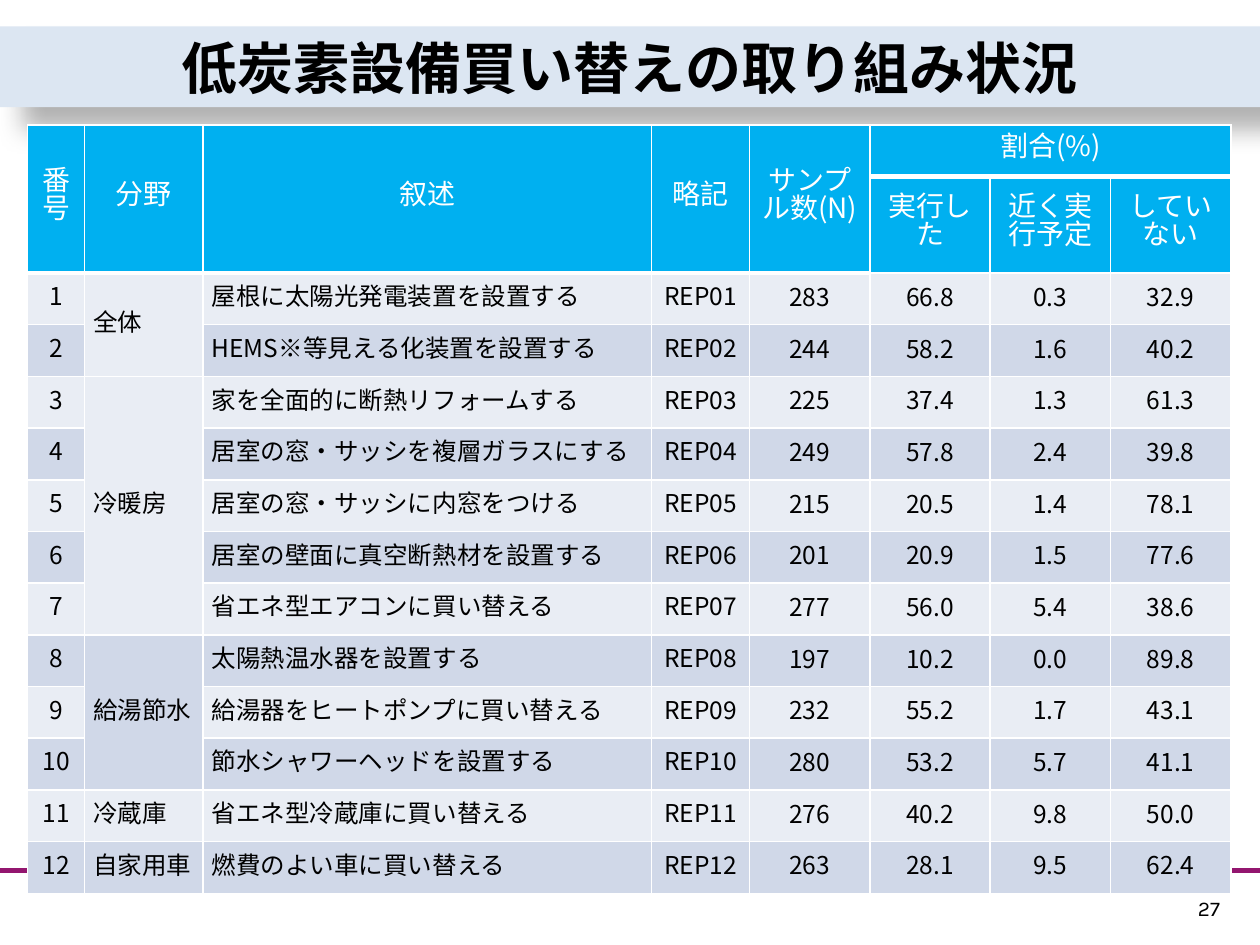
from lxml.etree import SubElement
from pptx import Presentation
from pptx.dml.color import RGBColor
from pptx.enum.shapes import MSO_CONNECTOR
from pptx.enum.text import MSO_ANCHOR, MSO_AUTO_SIZE, PP_ALIGN
from pptx.oxml import parse_xml
from pptx.oxml.ns import nsdecls, qn
from pptx.util import Inches, Pt

COLORS = {
    "text": "000000", "white": "FFFFFF", "band": "DCE6F2", "rule": "93166F",
    "header": "00B0F0", "light": "E9EDF4", "dark": "D0D8E8",
}
JP, LATIN = "Noto Sans CJK JP", "Karla"
WIDE, TIGHT, PADDED = (0.1, 0.05, 0.1, 0.05), (0.01, 0.01, 0.01, 0), (0.07, 0, 0.07, 0)

# Column widths and row heights, in percent of the slide
COLUMNS = [4.5, 9.4, 35.6, 7.8] + [9.55] * 4
HEADER_ROWS, ROW = [5.47, 6.67], 5.47

HEADINGS = ["番号", "分野", "叙述", "略記", "サンプル数(N)"]
SHARES = ["実行した", "近く実行予定", "していない"]
FIELDS = [("全体", 2), ("冷暖房", 5), ("給湯節水", 3), ("冷蔵庫", 1), ("自家用車", 1)]
MEASURES = [
    ("屋根に太陽光発電装置を設置する", "283", "66.8", "0.3", "32.9"),
    ("HEMS※等見える化装置を設置する", "244", "58.2", "1.6", "40.2"),
    ("家を全面的に断熱リフォームする", "225", "37.4", "1.3", "61.3"),
    ("居室の窓・サッシを複層ガラスにする", "249", "57.8", "2.4", "39.8"),
    ("居室の窓・サッシに内窓をつける", "215", "20.5", "1.4", "78.1"),
    ("居室の壁面に真空断熱材を設置する", "201", "20.9", "1.5", "77.6"),
    ("省エネ型エアコンに買い替える", "277", "56.0", "5.4", "38.6"),
    ("太陽熱温水器を設置する", "197", "10.2", "0.0", "89.8"),
    ("給湯器をヒートポンプに買い替える", "232", "55.2", "1.7", "43.1"),
    ("節水シャワーヘッドを設置する", "280", "53.2", "5.7", "41.1"),
    ("省エネ型冷蔵庫に買い替える", "276", "40.2", "9.8", "50.0"),
    ("燃費のよい車に買い替える", "263", "28.1", "9.5", "62.4"),
]


def rgb(name):
    return RGBColor.from_string(COLORS[name])


class SlideBuilder:
    """Holds the style and the current slide; lengths are percent of the slide."""

    def __init__(self, prs):
        self.prs = prs
        self.s = prs.slides.add_slide(prs.slide_layouts[5])

    def x(self, percent):
        return round(self.prs.slide_width * percent / 100)

    def y(self, percent):
        return round(self.prs.slide_height * percent / 100)

    def box(self, left, top, width, height):
        return self.x(left), self.y(top), self.x(width), self.y(height)

    def set_text(self, tf, text, size, color="text", font=JP, bold=False, align=PP_ALIGN.LEFT):
        tf.text = text
        p = tf.paragraphs[0]
        p.alignment = align
        p.font.size, p.font.bold, p.font.name = Pt(size), bold, font
        p.font.color.rgb = rgb(color)
        SubElement(p._p.pPr.find(qn("a:defRPr")), qn("a:ea"), typeface=font)
        return p

    def rule(self, top):
        line = self.s.shapes.add_connector(
            MSO_CONNECTOR.STRAIGHT, 0, self.y(top), self.x(100), self.y(top))
        line.line.color.rgb, line.line.width = rgb("rule"), Pt(3)
        SubElement(line._element.spPr, qn("a:effectLst"))

    def page_number(self, text, *place):
        tf = self.s.shapes.add_textbox(*self.box(*place)).text_frame
        tf.word_wrap = True
        tf.auto_size = MSO_AUTO_SIZE.SHAPE_TO_FIT_TEXT
        self.set_text(tf, text, 12, font=LATIN)

    def title(self, text, *place):
        sp = self.s.shapes.title
        sp.left, sp.top, sp.width, sp.height = self.box(*place)
        sp.fill.solid()
        sp.fill.fore_color.rgb = rgb("band")
        sp._element.spPr.append(parse_xml(
            f'<a:effectLst {nsdecls("a")}><a:outerShdw blurRad="{Pt(15)}" dist="{Pt(18)}" '
            f'dir="2700000" algn="tl" rotWithShape="0"><a:srgbClr val="{COLORS["text"]}">'
            '<a:alpha val="30000"/></a:srgbClr></a:outerShdw></a:effectLst>'))
        tf = sp.text_frame
        tf.auto_size, tf.vertical_anchor = MSO_AUTO_SIZE.NONE, MSO_ANCHOR.MIDDLE
        self.set_text(tf, text, 32, bold=True, align=PP_ALIGN.CENTER)

    def table(self, left, top, columns, rows):
        frame = self.s.shapes.add_table(
            len(rows), len(columns), *self.box(left, top, sum(columns), sum(rows)))
        table = frame.table
        table.first_row = table.horz_banding = False
        for column, width in zip(table.columns, columns):
            column.width = self.x(width)
        for row, height in zip(table.rows, rows):
            row.height = self.y(height)
        return table

    def paint(self, cell, fill, bottom=1):
        for side, width in (("L", 1), ("R", 1), ("T", 1), ("B", bottom)):
            cell._tc.get_or_add_tcPr().append(parse_xml(
                f'<a:ln{side} {nsdecls("a")} w="{Pt(width)}"><a:solidFill>'
                f'<a:srgbClr val="{COLORS["white"]}"/></a:solidFill></a:ln{side}>'))
        cell.fill.solid()
        cell.fill.fore_color.rgb = rgb(fill)

    def cell(self, cell, text, size=14, color="text", align=PP_ALIGN.CENTER, margins=WIDE):
        cell.vertical_anchor = MSO_ANCHOR.MIDDLE
        (cell.margin_left, cell.margin_top,
         cell.margin_right, cell.margin_bottom) = map(Inches, margins)
        p = self.set_text(cell.text_frame, text, size, color, align=align)
        p.line_spacing = Pt(16)

    def heading(self, cell, text):
        self.cell(cell, text, 16, "white")


def main():
    prs = Presentation()
    prs.slide_width, prs.slide_height = Inches(10), Inches(7.5)
    b = SlideBuilder(prs)

    # Frame of the slide
    b.rule(92.13)
    b.page_number("27", 94.1, 94.13, 4.7, 4)
    b.title("低炭素設備買い替えの取り組み状況", 0, 2.8, 100, 8.53)

    # Table fills and borders
    table = b.table(2.2, 13.2, COLUMNS, HEADER_ROWS + [ROW] * len(MEASURES))
    last = len(COLUMNS) - 1
    first_share = len(HEADINGS)
    for r in range(len(table.rows)):
        for c in range(len(COLUMNS)):
            fill = "header" if r < 2 else ("light", "dark")[r % 2]
            thick = r == 0 or (r == 1 and c < first_share)
            b.paint(table.cell(r, c), fill, 3 if thick else 1)

    # Header
    for c, text in enumerate(HEADINGS):
        table.cell(0, c).merge(table.cell(1, c))
        b.heading(table.cell(0, c), text)
    table.cell(0, first_share).merge(table.cell(0, last))
    b.heading(table.cell(0, first_share), "割合(%)")
    for c, text in enumerate(SHARES, first_share):
        b.heading(table.cell(1, c), text)

    # Fields, merged down their measures
    r = 2
    for text, count in FIELDS:
        if count > 1:
            table.cell(r, 1).merge(table.cell(r + count - 1, 1))
        b.cell(table.cell(r, 1), text, align=PP_ALIGN.LEFT, margins=PADDED)
        r += count

    # Measures
    for n, (measure, *values) in enumerate(MEASURES, 1):
        r = n + 1
        b.cell(table.cell(r, 0), str(n))
        b.cell(table.cell(r, 2), measure, align=PP_ALIGN.JUSTIFY, margins=PADDED)
        b.cell(table.cell(r, 3), f"REP{n:02}", margins=PADDED)
        for c, value in enumerate(values, 4):
            b.cell(table.cell(r, c), value, margins=TIGHT)

    prs.save("out.pptx")


if __name__ == "__main__":
    main()
